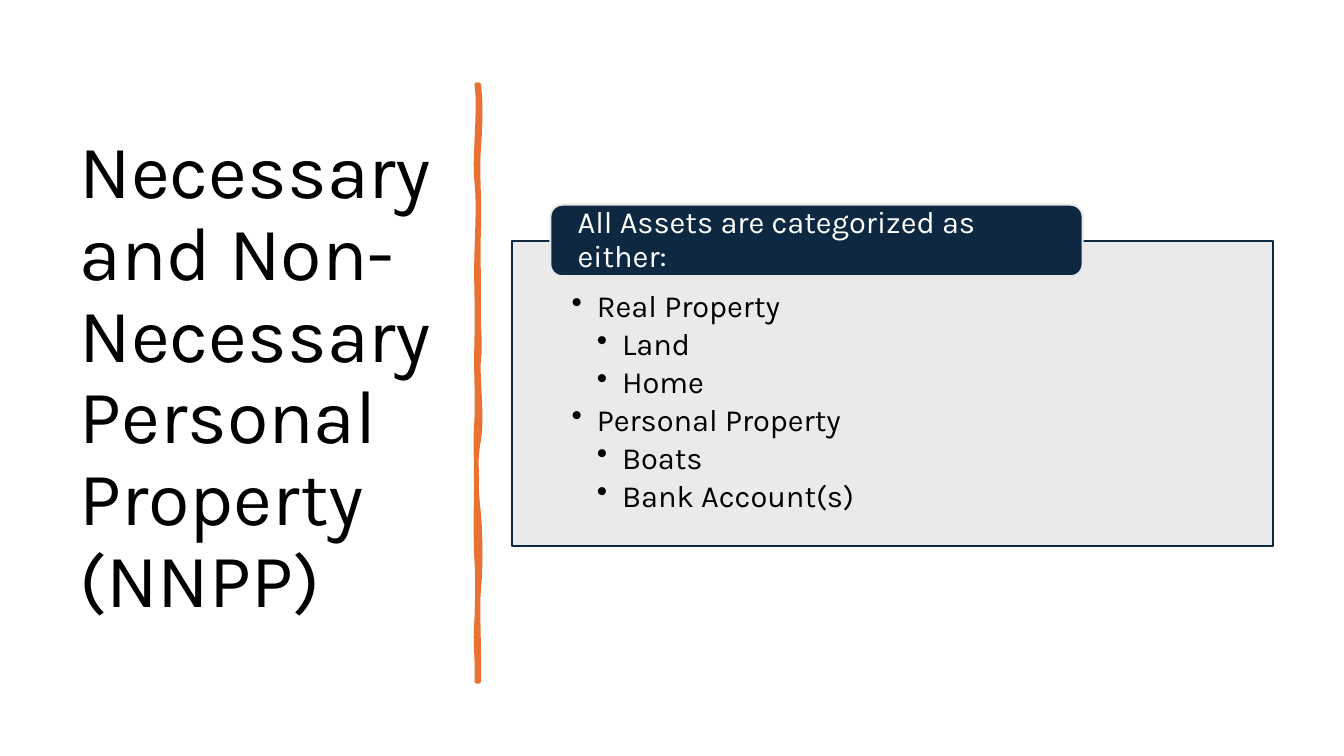
from lxml import etree
from pptx import Presentation
from pptx.dml.color import RGBColor
from pptx.enum.shapes import MSO_SHAPE
from pptx.enum.text import MSO_ANCHOR, PP_ALIGN
from pptx.oxml.ns import qn
from pptx.util import Pt

RECTANGLE = MSO_SHAPE.RECTANGLE
ROUNDED = MSO_SHAPE.ROUNDED_RECTANGLE
MIDDLE = MSO_ANCHOR.MIDDLE
TOP = MSO_ANCHOR.TOP
LEFT = PP_ALIGN.LEFT

FONT = "Karla"
COLORS = {"black": "000000", "white": "FFFFFF", "orange": "E97132",
          "navy": "0E2841", "gray": "E8E8E8"}

TITLE = "Necessary and Non-Necessary Personal Property (NNPP)"
HEADING = "All Assets are categorized as either:"
ASSETS = [
    ("Real Property", ["Land", "Home"]),
    ("Personal Property", ["Boats", "Bank Account(s)"]),
]

STROKE_TOP, STROKE_BOTTOM = 60.5, 486.7
RIGHT_X, LEFT_X = 342, 340.6
RIGHT_EDGE = [
    (343.4, 73.4, 343.4, 85.7, 105.1), (340.6, 124.6, 342.7, 140.4, 162.7),
    (341.3, 185, 342, 188.6, 211.7), (341.3, 234, 343.4, 246.2, 256.3),
    (340.6, 266.4, 344.9, 298.1, 313.9), (339.1, 329, 339.8, 348.5, 367.2),
    (343.4, 385.9, 343.4, 406.1, 420.5), (340.6, 434.2, 342.7, 468, 486.7),
]
LEFT_EDGE = [
    (341.3, 465.1, 339.1, 463.7, 441.4), (341.3, 419.8, 341.3, 410.4, 401),
    (339.8, 391.7, 339.8, 356.4, 343.4), (340.6, 330.5, 339.1, 320.4, 298.8),
    (341.3, 277.9, 339.8, 268.6, 241.2), (341.3, 214.6, 339.8, 202.3, 180),
    (341.3, 157, 342, 144, 130.3), (338.4, 117.4, 343.4, 74.9, 60.5),
]
CURVE_STEPS = 8


def rgb(name):
    return RGBColor.from_string(COLORS[name])


def paint(shape, fill, line, width):
    shape.shadow.inherit = False
    shape.fill.solid()
    shape.fill.fore_color.rgb = rgb(fill)
    shape.line.color.rgb = rgb(line)
    shape.line.width = Pt(width)


def set_frame(shape, insets, anchor):
    frame = shape.text_frame
    frame.word_wrap = True
    frame.vertical_anchor = anchor
    (frame.margin_left, frame.margin_top,
     frame.margin_right, frame.margin_bottom) = map(Pt, insets)
    return frame


def write(para, text, size, color):
    para.text = text
    para.alignment = LEFT
    para.line_spacing = 0.9
    font = para.runs[0].font
    font.name = FONT
    font.size = Pt(size)
    font.color.rgb = rgb(color)


def add_bullet(para, level):
    para.level = level
    para.space_after = Pt(3.3)
    props = para._p.get_or_add_pPr()
    props.set("marL", str(Pt(18 * (level + 1))))
    props.set("indent", str(Pt(-18)))
    etree.SubElement(props, qn("a:buChar")).set("char", "•")


def trace_edge(x, y, curves):
    points = []
    for x1, y1, x2, y2, end in curves:
        for step in range(1, CURVE_STEPS + 1):
            t = step / CURVE_STEPS
            u = 1 - t
            weights = (u ** 3, 3 * u * u * t, 3 * u * t * t, t ** 3)
            points.append(tuple(
                Pt(sum(w * c for w, c in zip(weights, coords)))
                for coords in ((x, x1, x2, x), (y, y1, y2, end))))
        y = end
    return points


def add_brush_stroke(shapes):
    points = trace_edge(RIGHT_X, STROKE_TOP, RIGHT_EDGE)
    points.append((Pt(LEFT_X), Pt(STROKE_BOTTOM)))
    points += trace_edge(LEFT_X, STROKE_BOTTOM, LEFT_EDGE)
    builder = shapes.build_freeform(Pt(RIGHT_X), Pt(STROKE_TOP))
    builder.add_line_segments(points, close=True)
    stroke = builder.convert_to_shape()
    paint(stroke, "orange", "orange", 3.25)
    etree.SubElement(stroke.line._get_or_add_ln(), qn("a:round"))


def add_asset_panel(shapes):
    panel = shapes.add_shape(RECTANGLE, Pt(365.8), Pt(172.1), Pt(543.6), Pt(218.2))
    paint(panel, "gray", "navy", 1.5)
    color = panel.fill._xPr.find(qn("a:solidFill"))[0]
    etree.SubElement(color, qn("a:alpha")).set("val", "90000")
    frame = set_frame(panel, (42.5, 36, 42.5, 12.2), TOP)
    items = []
    for category, examples in ASSETS:
        items.append((category, 0))
        items += [(example, 1) for example in examples]
    for index, (text, level) in enumerate(items):
        para = frame.add_paragraph() if index else frame.paragraphs[0]
        write(para, text, 22, "black")
        add_bullet(para, level)


def add_heading(shapes):
    heading = shapes.add_shape(ROUNDED, Pt(393.1), Pt(146.2), Pt(380.2), Pt(51.1))
    paint(heading, "navy", "gray", 1.5)
    frame = set_frame(heading, (17, 0, 17, 0), MIDDLE)
    write(frame.paragraphs[0], HEADING, 22, "white")


def main():
    deck = Presentation()
    deck.slide_width, deck.slide_height = Pt(960), Pt(540)
    page = deck.slides.add_slide(deck.slide_layouts[6])
    title = page.shapes.add_textbox(Pt(49.7), Pt(50.4), Pt(269.3), Pt(439.9))
    frame = set_frame(title, (7.2, 3.6, 7.2, 3.6), MIDDLE)
    write(frame.paragraphs[0], TITLE, 54, "black")
    add_brush_stroke(page.shapes)
    add_asset_panel(page.shapes)
    add_heading(page.shapes)
    deck.save("out.pptx")


if __name__ == "__main__":
    main()
